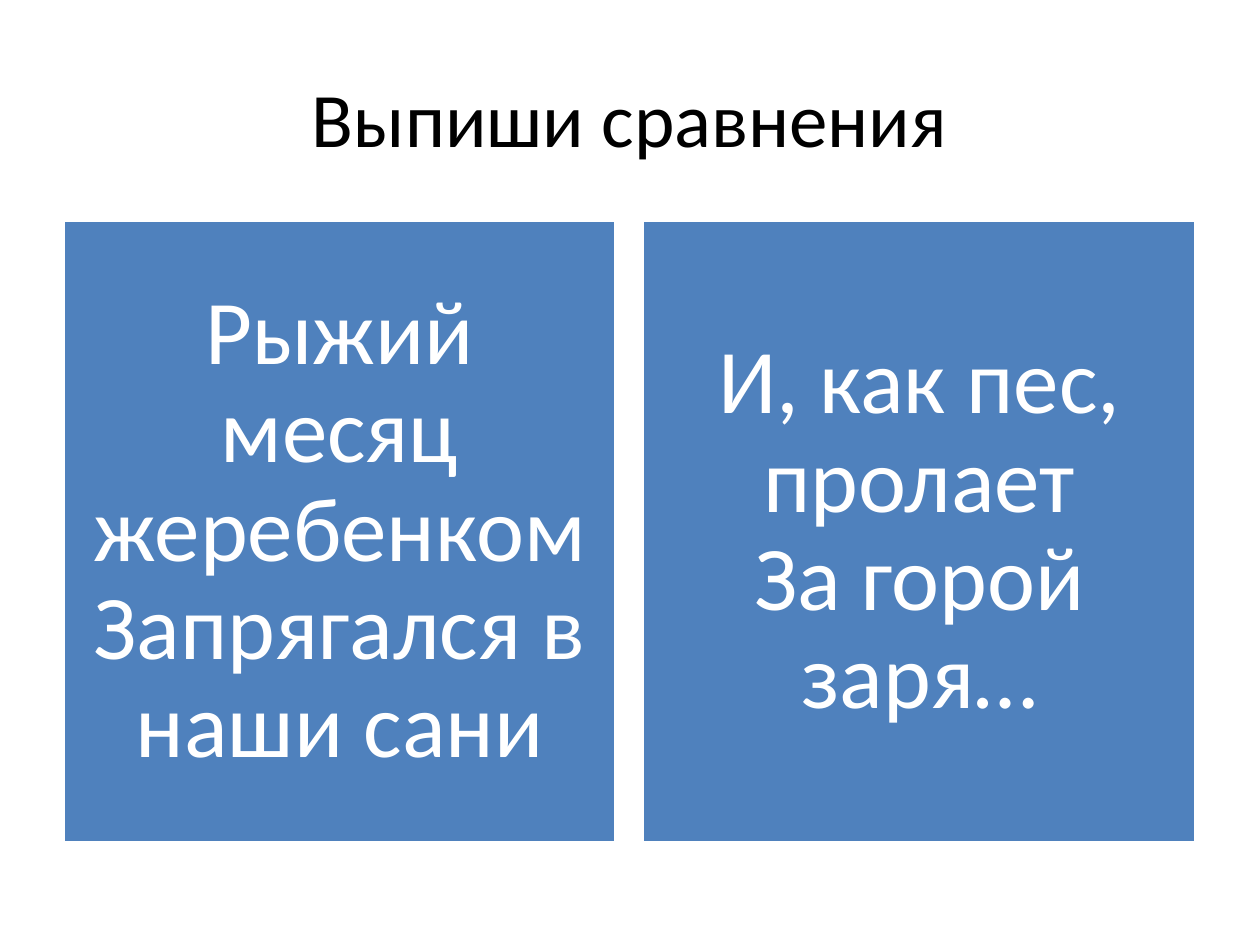
"""Build a slide with a title and two verse panels for finding comparisons."""
from dataclasses import dataclass

import pptx
import pptx.dml.color
import pptx.enum.shapes
import pptx.enum.text
import pptx.slide
import pptx.text.text
import pptx.util

EMU_PER_PX = 9144
COLORS = {"background": "FFFFFF", "title": "000000", "panel": "4F81BD", "verse": "FFFFFF"}
MARGIN, PANEL_TOP, PANEL_WIDTH, PANEL_HEIGHT, PANEL_GAP = 50, 175, 439, 494, 21
PANEL_INSET = 22


@dataclass
class Panel:
    left: int
    text: str


VERSES = (
    "Рыжий месяц жеребенком\nЗапрягался в наши сани",
    "И, как пес, пролает\nЗа горой заря…",
)


def px(length: int) -> pptx.util.Emu:
    return pptx.util.Emu(length * EMU_PER_PX)


def color(name: str) -> pptx.dml.color.RGBColor:
    return pptx.dml.color.RGBColor.from_string(COLORS[name])


def apply_format(target: object, values: dict) -> None:
    for name, value in values.items():
        setattr(target, name, value)


def write_text(frame: pptx.text.text.TextFrame, text: str, size: int,
               color_name: str, inset: int, spacing: float) -> None:
    apply_format(frame, {
        "word_wrap": True,
        "auto_size": pptx.enum.text.MSO_AUTO_SIZE.NONE,
        "vertical_anchor": pptx.enum.text.MSO_ANCHOR.MIDDLE,
        "margin_left": px(inset),
        "margin_right": px(inset),
        "margin_top": px(inset),
        "margin_bottom": px(inset),
    })
    paragraph = frame.paragraphs[0]
    paragraph.text = text
    apply_format(paragraph, {
        "alignment": pptx.enum.text.PP_ALIGN.CENTER,
        "line_spacing": spacing,
    })
    for run in paragraph.runs:
        apply_format(run.font, {"name": "Calibri", "size": pptx.util.Pt(size)})
        run.font.color.rgb = color(color_name)


def draw_title(slide: pptx.slide.Slide, text: str) -> None:
    title = slide.shapes.title
    apply_format(title, {"left": px(MARGIN), "top": px(30),
                         "width": px(900), "height": px(125)})
    write_text(title.text_frame, text, 44, "title", 10, 1.0)


def draw_panel(slide: pptx.slide.Slide, panel: Panel) -> None:
    shape = slide.shapes.add_shape(
        pptx.enum.shapes.MSO_SHAPE.RECTANGLE,
        px(panel.left), px(PANEL_TOP), px(PANEL_WIDTH), px(PANEL_HEIGHT))
    shape.shadow.inherit = False
    shape.fill.solid()
    shape.fill.fore_color.rgb = color("panel")
    shape.line.color.rgb = color("background")
    shape.line.width = pptx.util.Pt(2)
    write_text(shape.text_frame, panel.text, 52, "verse", PANEL_INSET, 0.9)


def main() -> None:
    presentation = pptx.Presentation()
    apply_format(presentation, {"slide_width": px(1000), "slide_height": px(750)})
    slide = presentation.slides.add_slide(presentation.slide_layouts.get_by_name("Title Only"))
    slide.background.fill.solid()
    slide.background.fill.fore_color.rgb = color("background")
    draw_title(slide, "Выпиши сравнения")
    for index, verse in enumerate(VERSES):
        draw_panel(slide, Panel(MARGIN + index * (PANEL_WIDTH + PANEL_GAP), verse))
    presentation.save("out.pptx")


if __name__ == "__main__":
    main()
